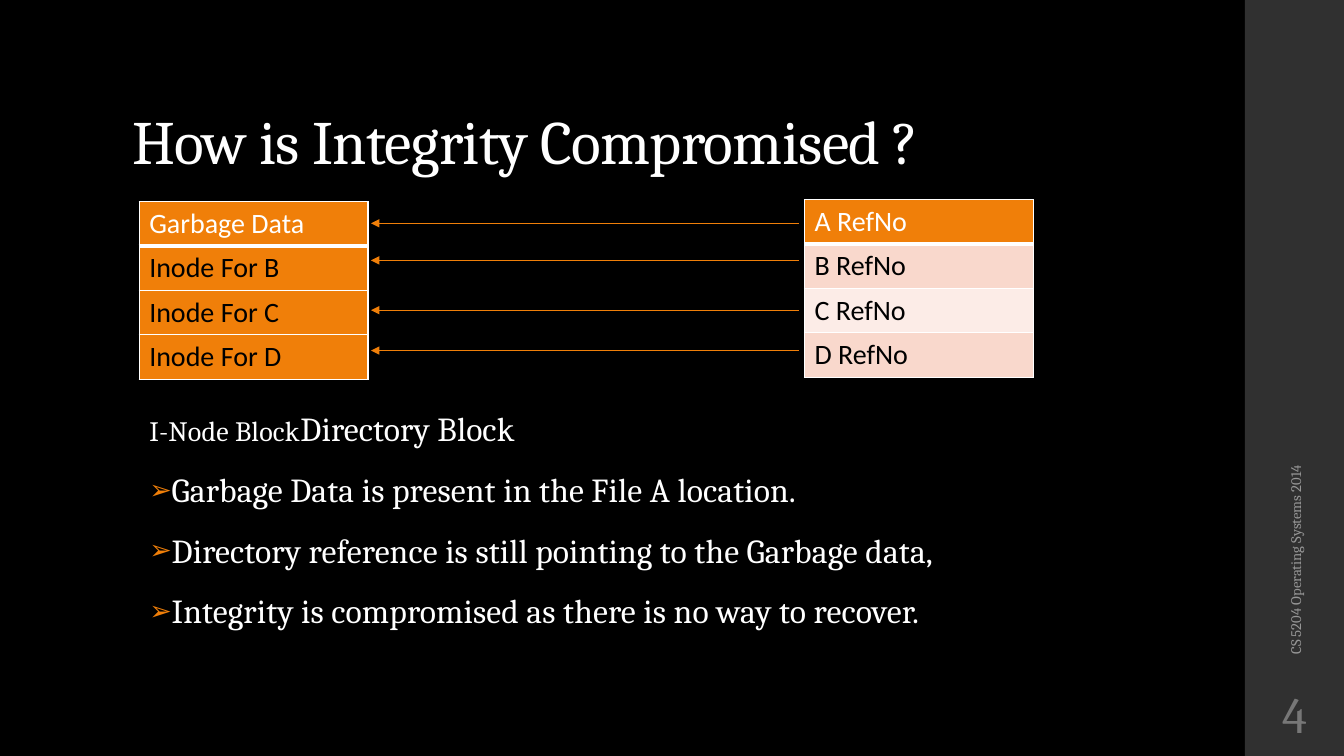
from lxml import etree
from pptx import Presentation
from pptx.dml.color import RGBColor
from pptx.enum.shapes import MSO_CONNECTOR, MSO_SHAPE
from pptx.enum.text import MSO_ANCHOR, MSO_AUTO_SIZE, PP_ALIGN
from pptx.oxml.ns import qn
from pptx.util import Pt

STRAIGHT = MSO_CONNECTOR.STRAIGHT
RECTANGLE = MSO_SHAPE.RECTANGLE
TOP, MIDDLE = MSO_ANCHOR.TOP, MSO_ANCHOR.MIDDLE
LEFT, CENTER = PP_ALIGN.LEFT, PP_ALIGN.CENTER
NO_AUTOFIT = MSO_AUTO_SIZE.NONE

COLORS = {
    "background": "000000", "sidebar": "303030", "orange": "F07F09",
    "band": "F9D8CC", "pale": "FCECE7", "white": "FFFFFF", "black": "000000",
    "footer": "969696", "number": "777777",
}
SERIF, SANS = "Cambria", "Calibri"

TITLE = "How is Integrity Compromised ?"
LABELS = [("I-Node Block", 20), ("\t", 18), ("Directory Block", 24)]
BULLETS = [
    "Garbage Data is present in the File A location.",
    "Directory reference is still pointing to the Garbage data,",
    "Integrity is compromised as there is no way to recover.",
]
FOOTER = "CS 5204 Operating Systems 2014"
SLIDE_NUMBER = "4"
# left, top, then rows of (text, fill)
TABLES = [
    (99.4, 144, [("Garbage Data", "orange"), ("Inode For B", "orange"),
                 ("Inode For C", "orange"), ("Inode For D", "orange")]),
    (574.6, 142.6, [("A RefNo", "orange"), ("B RefNo", "band"),
                    ("C RefNo", "pale"), ("D RefNo", "band")]),
]
TABLE_WIDTH, ROW_HEIGHT = 163.4, 31.7
ARROW_START, ARROW_END = 570.6, 265
ARROW_HEIGHTS = [159.5, 186, 221.6, 250.4]
SLIDE_WIDTH, SLIDE_HEIGHT = 960, 540
SIDEBAR_LEFT, SIDEBAR_WIDTH = 889.2, 70.8
LABEL_TAB = 456.5


def rgb(name):
    return RGBColor.from_string(COLORS[name])


def add_element(parent, tag, **attributes):
    return etree.SubElement(parent, qn(tag), attributes)


def add_color(parent, name):
    add_element(parent, "a:srgbClr", val=COLORS[name])


def add_run(paragraph, text, size, color, font=SERIF, spacing=0):
    """Add a formatted run; spacing is in hundredths of a point."""
    run = paragraph.add_run()
    run.text = text
    run.font.size = Pt(size)
    run.font.name = font
    run.font.color.rgb = rgb(color)
    if spacing:
        run.font._element.set("spc", str(spacing))


def place(shape, left, top, width, height):
    shape.left, shape.top = Pt(left), Pt(top)
    shape.width, shape.height = Pt(width), Pt(height)


def prepare_frame(shape, anchor):
    frame = shape.text_frame
    frame.word_wrap = True
    frame.auto_size = NO_AUTOFIT
    frame.vertical_anchor = anchor
    return frame


def add_title(slide):
    title = slide.shapes.title
    place(title, 87.1, 76, 763.2, 50)
    paragraph = prepare_frame(title, TOP).paragraphs[0]
    paragraph.alignment = LEFT
    paragraph.line_spacing = 0.9
    paragraph.space_before = Pt(0)
    add_run(paragraph, TITLE, 44, "white", spacing=-50)


def add_body(slide):
    body = slide.placeholders[1]
    place(body, 99.4, 290, 676.8, 196.6)
    frame = prepare_frame(body, TOP)
    labels = frame.paragraphs[0]
    paragraphs = [labels] + [frame.add_paragraph() for _ in BULLETS]
    for paragraph in paragraphs:
        paragraph.alignment = LEFT
        paragraph.line_spacing = 0.95
        paragraph.space_before = Pt(0 if paragraph is labels else 14)
        paragraph.space_after = Pt(2)

    properties = labels._p.get_or_add_pPr()
    properties.set("marL", "0")
    properties.set("indent", "0")
    add_element(properties, "a:buNone")
    tabs = add_element(properties, "a:tabLst")
    add_element(tabs, "a:tab", pos=str(Pt(LABEL_TAB)), algn="l")
    for text, size in LABELS:
        add_run(labels, text, size, "white", spacing=10)

    for paragraph, text in zip(paragraphs[1:], BULLETS):
        properties = paragraph._p.get_or_add_pPr()
        properties.set("marL", str(Pt(14.4)))
        properties.set("indent", str(-Pt(14.4)))
        add_color(add_element(properties, "a:buClr"), "orange")
        add_element(properties, "a:buSzPct", val="80000")
        add_element(properties, "a:buChar", char="➢")
        add_run(paragraph, text, 24, "white", spacing=10)


def add_block_table(slide, left, top, rows):
    frame = slide.shapes.add_table(len(rows), 1, Pt(left), Pt(top),
                                   Pt(TABLE_WIDTH), Pt(ROW_HEIGHT * len(rows)))
    table = frame.table
    table.first_row = table.horz_banding = False
    for index, (text, fill) in enumerate(rows):
        table.rows[index].height = Pt(ROW_HEIGHT)
        cell = table.cell(index, 0)
        properties = cell._tc.get_or_add_tcPr()
        widths = {"L": 1, "R": 1, "T": 3 if index == 1 else 1,
                  "B": 3 if index == 0 else 1}
        for side, width in widths.items():
            border = add_element(properties, f"a:ln{side}", w=str(Pt(width)))
            add_color(add_element(border, "a:solidFill"), "white")
        cell.fill.solid()
        cell.fill.fore_color.rgb = rgb(fill)
        color = "white" if index == 0 else "black"
        add_run(cell.text_frame.paragraphs[0], text, 20, color, SANS)


def add_arrow(slide, height):
    arrow = slide.shapes.add_connector(STRAIGHT, Pt(ARROW_START), Pt(height),
                                       Pt(ARROW_END), Pt(height))
    arrow.line.color.rgb = rgb("orange")
    arrow.line.width = Pt(0.75)
    add_element(arrow.line._get_or_add_ln(), "a:tailEnd", type="triangle")
    add_element(arrow._element.spPr, "a:effectLst")


def add_text_box(slide, box, text, size, color, alignment):
    shape = slide.shapes.add_textbox(*map(Pt, box))
    paragraph = prepare_frame(shape, MIDDLE).paragraphs[0]
    paragraph.alignment = alignment
    add_run(paragraph, text, size, color)
    return shape


def main():
    presentation = Presentation()
    presentation.slide_width = Pt(SLIDE_WIDTH)
    presentation.slide_height = Pt(SLIDE_HEIGHT)
    slide = presentation.slides.add_slide(presentation.slide_layouts[1])
    slide.background.fill.solid()
    slide.background.fill.fore_color.rgb = rgb("background")

    sidebar = slide.shapes.add_shape(RECTANGLE, Pt(SIDEBAR_LEFT), Pt(0),
                                     Pt(SIDEBAR_WIDTH), Pt(SLIDE_HEIGHT))
    sidebar.shadow.inherit = False
    sidebar.fill.solid()
    sidebar.fill.fore_color.rgb = rgb("sidebar")
    sidebar.line.fill.background()

    add_title(slide)
    add_body(slide)
    for left, top, rows in TABLES:
        add_block_table(slide, left, top, rows)
    for height in ARROW_HEIGHTS:
        add_arrow(slide, height)

    footer = add_text_box(slide, (784.1, 319, 282.2, 28.8), FOOTER, 10.5,
                          "footer", LEFT)
    footer.rotation = 270
    add_text_box(slide, (SIDEBAR_LEFT, 486, SIDEBAR_WIDTH, 46.8), SLIDE_NUMBER,
                 36, "number", CENTER)
    presentation.save("out.pptx")


if __name__ == "__main__":
    main()
